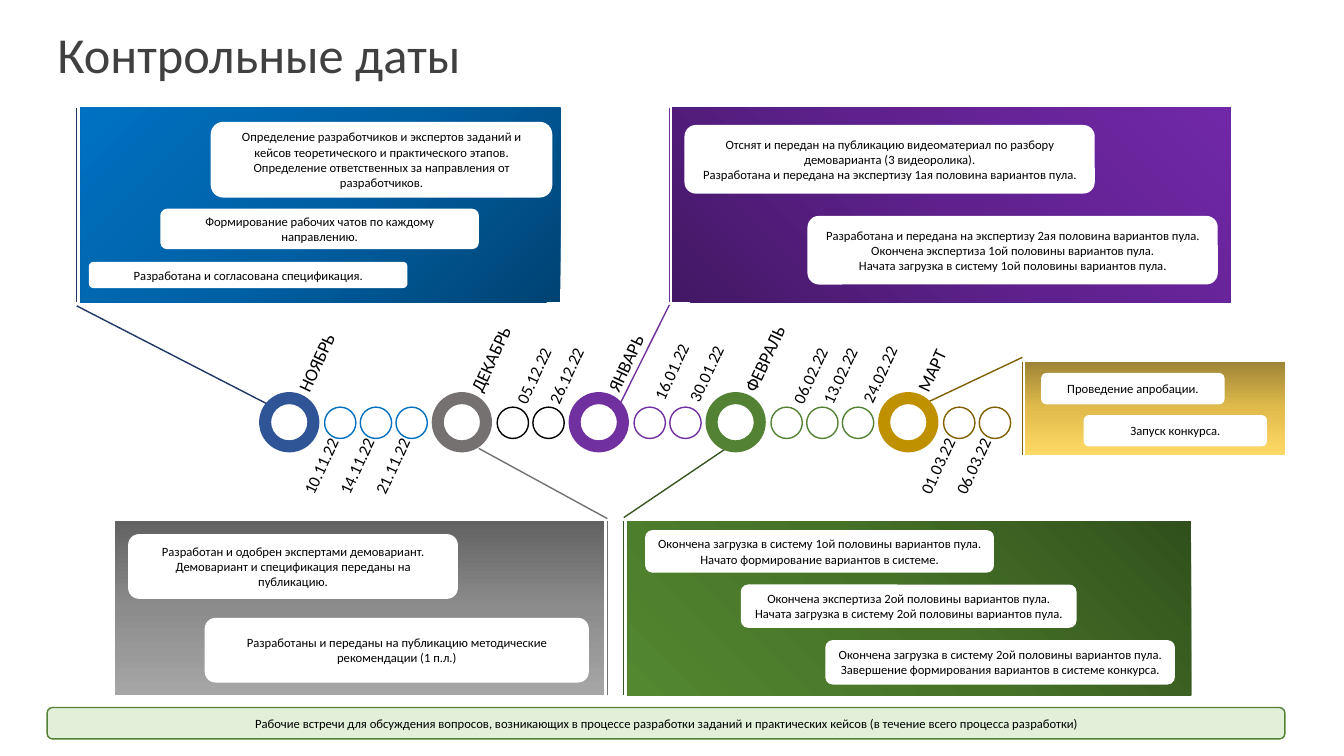
from copy import deepcopy
from dataclasses import dataclass

from pptx import Presentation
from pptx.dml.color import RGBColor
from pptx.enum import shapes, text
from pptx.util import Cm, Pt


@dataclass(frozen=True)
class Theme:
    font: str = "Calibri"
    title_size: int = 36
    month_size: int = 13
    date_size: int = 12
    card_size: int = 9
    title: str = "404040"
    ink: str = "000000"
    white: str = "FFFFFF"
    footer: str = "E2F0D9"
    blue: str = "2F5597"
    blue_dot: str = "0070C0"
    blue_line: str = "203864"
    blue_fade: tuple = ("004373", "0060A4", "0071C2")
    gray: str = "767171"
    gray_fade: tuple = ("626262", "8C8C8C", "A6A6A6")
    purple: str = "7030A0"
    purple_fade: tuple = ("431764", "5F218E", "7128A8")
    green: str = "548235"
    green_line: str = "385723"
    green_fade: tuple = ("31501C", "467228", "538730")
    gold: str = "BF9000"
    gold_line: str = "806000"
    gold_fade: tuple = ("9E8436", "E1BC4C", "FFD966")


theme = Theme()
Kind = shapes.MSO_SHAPE
LEFT, CENTER, RIGHT = text.PP_ALIGN.LEFT, text.PP_ALIGN.CENTER, text.PP_ALIGN.RIGHT


def write(box, content, *, size, color=theme.ink, align=LEFT, spacing=None, insets=None):
    """Fill a shape with one paragraph per line of content."""
    frame = box.text_frame
    frame.word_wrap = True
    frame.vertical_anchor = text.MSO_ANCHOR.MIDDLE
    if insets:
        frame.margin_left, frame.margin_right = map(Cm, insets)
        frame.margin_top = frame.margin_bottom = 0
    frame.text = content
    for para in frame.paragraphs:
        para.alignment = align
        para.line_spacing = spacing
        for span in para.runs:
            span.font.name = theme.font
            span.font.size = Pt(size)
            span.font.color.rgb = RGBColor.from_string(color)


def draw(parent, kind, at, *, fill=None, line=None):
    """Add a flat preset shape; at is left, top, width, height in cm."""
    box = parent.add_shape(kind, *map(Cm, at))
    box.shadow.inherit = False
    if fill:
        box.fill.solid()
        box.fill.fore_color.rgb = RGBColor.from_string(fill)
    if line:
        box.line.color.rgb = RGBColor.from_string(line)
        box.line.width = Pt(1)
    else:
        box.line.fill.background()
    return box


deck = Presentation()
deck.slide_width, deck.slide_height = Cm(33.87), Cm(19.05)
page = deck.slides.add_slide(deck.slide_layouts[5])

# Gradient panels whose leader lines point at the months
panels = [
    ((25.83, 9.12, 6.55, 2.34), (-0.049, -0.01, 0.436, -0.376), theme.gold_fade, 90, theme.gold_line),
    ((2.9, 13.13, 12.32, 4.39), (-0.014, 1.007, -0.417, 0.744), theme.gray_fade, 90, theme.gray),
    ((15.82, 13.13, 14.2, 4.39), (-0.02, -0.007, -0.422, 0.177), theme.green_fade, 135, theme.green_line),
    ((16.94, 2.72, 14.07, 4.9), (1.013, -0.005, 1.526, -0.094), theme.purple_fade, 315, theme.purple),
    ((2.03, 2.72, 12.09, 4.9), (1.018, -0.008, 1.526, 0.392), theme.blue_fade, 225, theme.blue_line),
]
for at, leader, fade, clockwise, line in panels:
    panel = draw(page.shapes, Kind.LINE_CALLOUT_1_ACCENT_BAR, at, line=line)
    for index, value in enumerate(leader):
        panel.adjustments[index] = value
    panel.fill.gradient()
    panel.fill.gradient_angle = 360 - clockwise
    stop_list = panel.element.xpath(".//a:gsLst")[0]
    stop_list.insert(1, deepcopy(stop_list[0]))
    for stop, color, position in zip(panel.fill.gradient_stops, fade, (0, 0.5, 1)):
        stop.color.rgb = RGBColor.from_string(color)
        stop.position = position

title = page.shapes.title
title.left, title.top, title.width, title.height = map(Cm, (1.19, 0.84, 15.19, 1.19))
write(title, "Контрольные даты", size=theme.title_size, color=theme.title, spacing=0.9)

# Timeline: each date has its label's shift from the dot and its label's top
RING, RING_STEP, DOT, DOT_STEP = 1.52, 1.65, 0.79, 0.9
TILT = 295
BELOW = (-0.88, 11.35)
BELOW_MARCH = (-0.94, 11.35)
months = [
    ("НОЯБРЬ", theme.blue, theme.blue_dot,
     [("10.11.22", BELOW), ("14.11.22", BELOW), ("21.11.22", BELOW)]),
    ("ДЕКАБРЬ", theme.gray, theme.ink,
     [("05.12.22", (0.13, 9.07)), ("26.12.22", (0.05, 9.07))]),
    ("ЯНВАРЬ", theme.purple, theme.purple,
     [("16.01.22", (0.15, 8.97)), ("30.01.22", (0.13, 9.02))]),
    ("ФЕВРАЛЬ", theme.green, theme.green,
     [("06.02.22", (0.2, 9.07)), ("13.02.22", (0.05, 9.07)), ("24.02.22", (0.15, 9.04))]),
    ("МАРТ", theme.gold, theme.gold_line,
     [("01.03.22", BELOW_MARCH), ("06.03.22", BELOW_MARCH)]),
]
timeline = page.shapes.add_group_shape().shapes
x = 6.53
for month, ring_color, dot_color, dates in months:
    ring = draw(timeline, Kind.DONUT, (x, 9.88, RING, RING), fill=ring_color)
    ring.adjustments[0] = 0.2
    label = timeline.add_textbox(*map(Cm, (x + 0.46, 8.5, 2.2, 0.91)))
    label.rotation = TILT
    write(label, month, size=theme.month_size, spacing=0.9, insets=(0.1, 0))
    x += RING_STEP
    for date, (shift, top) in dates:
        draw(timeline, Kind.OVAL, (x, 10.26, DOT, DOT), fill=theme.white, line=dot_color)
        label = timeline.add_textbox(*map(Cm, (x + shift, top, 1.63, DOT)))
        label.rotation = TILT
        write(label, date, size=theme.date_size, align=RIGHT, spacing=0.9, insets=(0, 0.08))
        x += DOT_STEP

cards = [
    ((5.31, 3.07, 8.61, 1.91),
     "Определение разработчиков и экспертов заданий и кейсов теоретического и практического этапов.\n"
     "Определение ответственных за направления от разработчиков."),
    ((4.04, 5.26, 8.03, 1.02), "Формирование рабочих чатов по каждому направлению."),
    ((2.24, 6.6, 8.03, 0.66), "Разработана и согласована спецификация."),
    ((3.23, 13.46, 8.31, 1.63),
     "Разработан и одобрен экспертами демовариант.\n"
     "Демовариант и спецификация переданы на публикацию."),
    ((5.16, 15.57, 9.68, 1.63),
     "Разработаны и переданы на публикацию методические рекомендации (1 п.л.)"),
    ((17.25, 3.15, 10.34, 1.73),
     "Отснят и передан на публикацию видеоматериал по разбору демоварианта (3 видеоролика).\n"
     "Разработана и передана на экспертизу 1ая половина вариантов пула."),
    ((20.35, 5.44, 10.34, 1.73),
     "Разработана и передана на экспертизу 2ая половина вариантов пула.\n"
     "Окончена экспертиза 1ой половины вариантов пула.\n"
     "Начата загрузка в систему 1ой половины вариантов пула."),
    ((16.26, 13.36, 8.79, 1.07),
     "Окончена загрузка в систему 1ой половины вариантов пула.\n"
     "Начато формирование вариантов в системе."),
    ((18.67, 14.73, 8.46, 1.09),
     "Окончена экспертиза 2ой половины вариантов пула.\n"
     "Начата загрузка в систему 2ой половины вариантов пула."),
    ((20.8, 16.13, 8.81, 1.12),
     "Окончена загрузка в систему 2ой половины вариантов пула.\n"
     "Завершение формирования вариантов в системе конкурса."),
    ((26.24, 9.4, 4.62, 0.79), "Проведение апробации."),
    ((27.31, 10.46, 4.62, 0.79), "Запуск конкурса."),
]
for at, content in cards:
    card = draw(page.shapes, Kind.ROUNDED_RECTANGLE, at, fill=theme.white)
    write(card, content, size=theme.card_size, align=CENTER)

footer = draw(page.shapes, Kind.ROUNDED_RECTANGLE, (1.19, 17.83, 31.19, 0.79),
              fill=theme.footer, line=theme.green)
write(footer, "Рабочие встречи для обсуждения вопросов, возникающих в процессе разработки заданий "
      "и практических кейсов (в течение всего процесса разработки)",
      size=theme.card_size, align=CENTER)

deck.save("out.pptx")
